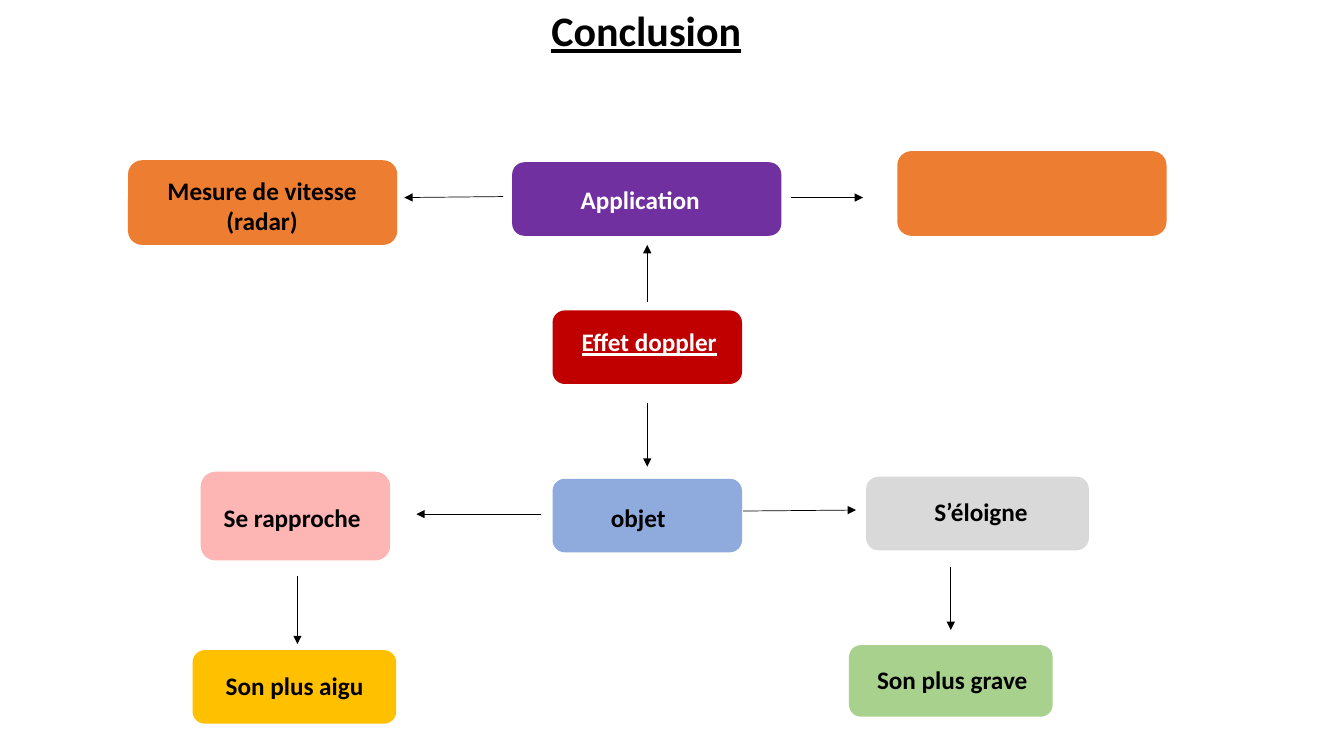
import pptx
import pptx.dml.color
import pptx.enum.shapes
import pptx.enum.text
import pptx.oxml
import pptx.oxml.ns
import pptx.util

Inches = pptx.util.Inches
COLORS = {
    "black": "000000", "white": "FFFFFF", "purple": "7030A0", "red": "C00000",
    "blue": "8FAADC", "grey": "D9D9D9", "green": "A9D18E", "pink": "FEB6B4",
    "gold": "FFC000", "orange": "ED7D31",
}


def color(name):
    """Return the named palette colour."""
    return pptx.dml.color.RGBColor.from_string(COLORS[name])


def add_label(page, box, lines, ink="black", size=18, underline=None, centered=False):
    """Write bold lines in a text box that grows with its text."""
    label = page.shapes.add_textbox(*(Inches(length) for length in box))
    frame = label.text_frame
    frame.word_wrap = True
    frame.auto_size = pptx.enum.text.MSO_AUTO_SIZE.SHAPE_TO_FIT_TEXT
    frame.text = "\n".join(lines)
    for para in frame.paragraphs:
        if centered:
            para.alignment = pptx.enum.text.PP_ALIGN.CENTER
        para.font.name = "Calibri"
        para.font.size = pptx.util.Pt(size)
        para.font.bold = True
        para.font.underline = underline
        para.font.color.rgb = color(ink)


def add_node(page, box, fill):
    """Draw a plain rounded rectangle."""
    node = page.shapes.add_shape(
        pptx.enum.shapes.MSO_SHAPE.ROUNDED_RECTANGLE, *(Inches(length) for length in box))
    node.shadow.inherit = False
    node.fill.solid()
    node.fill.fore_color.rgb = color(fill)
    node.line.fill.background()


def add_arrow(page, start, end):
    """Draw a thin black arrow from start to end."""
    arrow = page.shapes.add_connector(
        pptx.enum.shapes.MSO_CONNECTOR.STRAIGHT, *(Inches(length) for length in start + end))
    arrow.line.color.rgb = color("black")
    arrow.line.width = pptx.util.Pt(0.5)
    head = pptx.oxml.parse_xml(
        f'<a:tailEnd {pptx.oxml.ns.nsdecls("a")} type="triangle"/>')
    arrow.line._get_or_add_ln().append(head)
    properties = arrow._element.spPr
    properties.append(pptx.oxml.parse_xml(f'<a:effectLst {pptx.oxml.ns.nsdecls("a")}/>'))


def place_title(page, box):
    """Write the underlined slide title."""
    add_label(page, box, ["Conclusion"], size=30, underline=True)


def place_applications(page, box):
    """Draw the application node between its two examples."""
    left, top, width, height = box
    node_width, example_height = 2.67, 0.84
    add_node(page, (left, top + 0.09, node_width, example_height), "orange")
    add_label(page, (left + 0.28, top + 0.19, 2.1, 0.71),
              ["Mesure de vitesse", "(radar)"], centered=True)
    add_node(page, (left + 3.81, top + 0.11, node_width, 0.73), "purple")
    add_label(page, (left + 4.39, top + 0.28, 2.09, 0.4), ["Application"], "white")
    add_node(page, (left + width - node_width, top, node_width, example_height), "orange")
    add_arrow(page, (left + 3.72, top + 0.45), (left + 2.74, top + 0.46))
    add_arrow(page, (left + 6.58, top + 0.46), (left + 7.29, top + 0.46))


def place_effect(page, box):
    """Draw the central effect node with its arrows up and down."""
    left, top, width, height = box
    middle = left + width / 2
    add_node(page, box, "red")
    add_label(page, (left + 0.19, top + 0.11, 1.6, 0.4),
              ["Effet doppler"], "white", underline=True)
    add_arrow(page, (middle, top - 0.08), (middle, top - 0.65))
    add_arrow(page, (middle, top + 0.92), (middle, top + 1.55))


def place_motion(page, box):
    """Draw the moving object, its two directions and the resulting sounds."""
    left, top, width, height = box
    nodes = [
        ((0.08, 0, 1.88, 0.88), "pink", (0.21, 0.25, 2.1), "Se rapproche"),
        ((3.57, 0.07, 1.88, 0.73), "blue", (4.05, 0.25, 1.4), "objet"),
        ((6.68, 0.05, 2.21, 0.73), "grey", (7.26, 0.19, 1.4), "S’éloigne"),
        ((0, 1.77, 2.02, 0.73), "gold", (0.23, 1.92, 2.21), "Son plus aigu"),
        ((6.51, 1.72, 2.02, 0.71), "green", (6.69, 1.86, 2.02), "Son plus grave"),
    ]
    for (across, down, node_width, node_height), fill, label, text in nodes:
        add_node(page, (left + across, top + down, node_width, node_height), fill)
        add_label(page, (left + label[0], top + label[1], label[2], 0.4), [text])
    arrows = [
        ((3.46, 0.42), (2.22, 0.42)),
        ((5.46, 0.39), (6.58, 0.38)),
        ((1.04, 1.03), (1.04, 1.71)),
        ((7.52, 0.95), (7.52, 1.57)),
    ]
    for start, end in arrows:
        add_arrow(page, (left + start[0], top + start[1]), (left + end[0], top + end[1]))


def main():
    """Build and save the conclusion slide."""
    deck = pptx.Presentation()
    deck.slide_width, deck.slide_height = Inches(13.33), Inches(7.5)
    page = deck.slides.add_slide(deck.slide_layouts[6])
    place_title(page, (5.37, 0, 4.12, 0.61))
    place_applications(page, (1.27, 1.5, 10.3, 0.93))
    place_effect(page, (5.48, 3.08, 1.88, 0.73))
    place_motion(page, (1.91, 4.68, 8.89, 2.5))
    deck.save("out.pptx")


if __name__ == "__main__":
    main()
